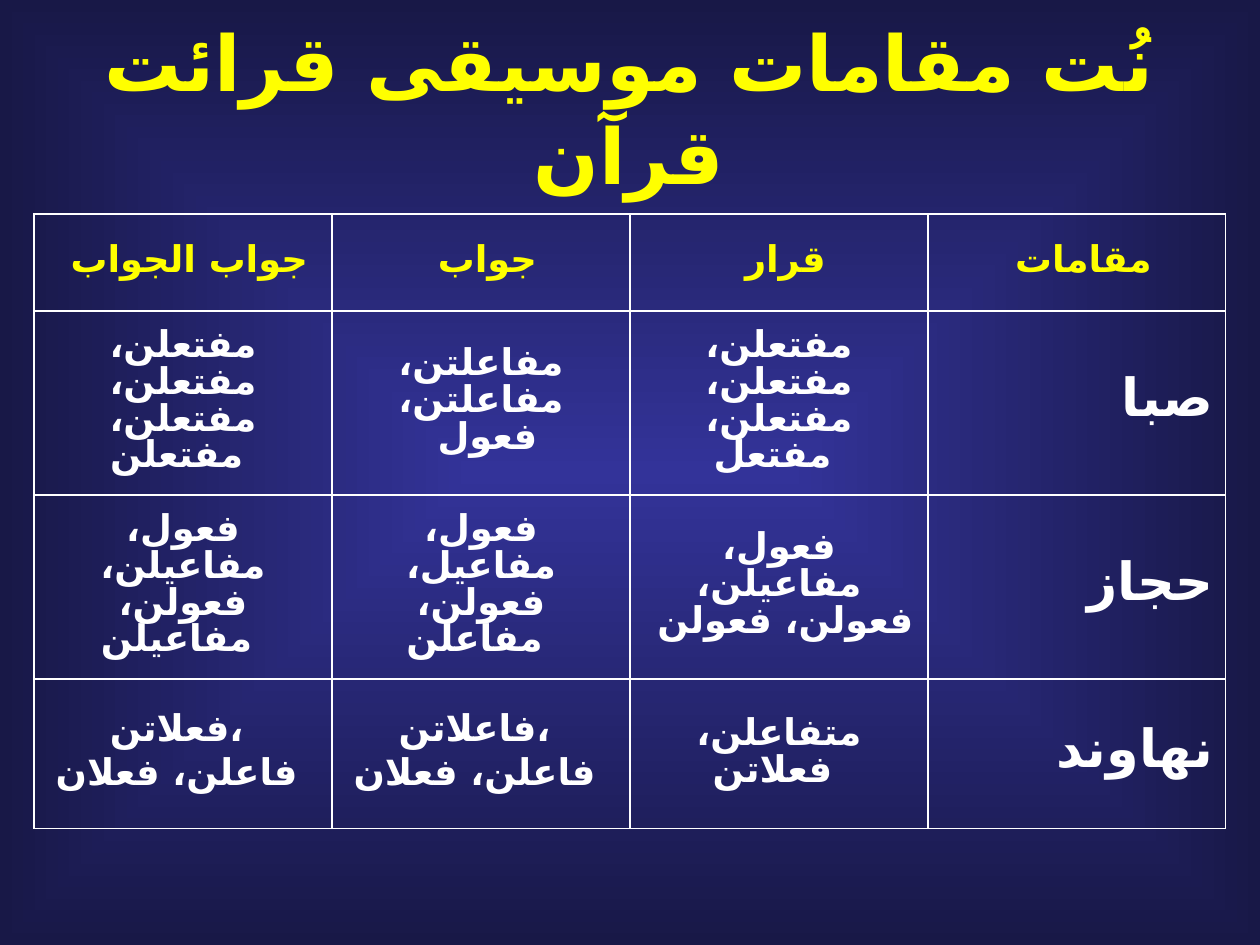
import pptx
import pptx.dml.color
import pptx.enum.text
import pptx.oxml
import pptx.oxml.ns
import pptx.util
from lxml import etree

TITLE = "نُت مقامات موسيقى قرائت قرآن"
HEADER = ["جواب الجواب ", "جواب ", "قرار ", "مقامات "]
BODY = [
    ["مفتعلن، مفتعلن، مفتعلن، مفتعلن ", "مفاعلتن، مفاعلتن، فعول ",
     "مفتعلن، مفتعلن، مفتعلن، مفتعل ", "صبا "],
    ["فعول، مفاعيلن، فعولن، مفاعيلن ", "فعول، مفاعيل، فعولن، مفاعلن ",
     "فعول، مفاعيلن، فعولن، فعولن ", "حجاز "],
    ["فعلاتن، \nفاعلن، فعلان ", "فاعلاتن، \nفاعلن، فعلان ",
     "متفاعلن، فعلاتن ", "نهاوند "],
]
RTL_BODY_CELLS = {(1, 1), (2, 2)}  # besides the header and the name column
NAME_COLUMN = 3
COLUMN_WIDTH = 298
ROW_HEIGHTS = [97, 184, 184, 150]
YELLOW, WHITE = "FFFF00", "FFFFFF"
LATIN_FONT, ARABIC_FONT = "Arial", "DejaVu Sans"
ALIGN = pptx.enum.text.PP_ALIGN
MIDDLE = pptx.enum.text.MSO_ANCHOR.MIDDLE


def px(length):
    return round(length * 914400 / 126)


def color(value):
    return pptx.dml.color.RGBColor.from_string(value)


def format_runs(paragraph, size, text_color):
    for run in paragraph.runs:
        run.font.name = LATIN_FONT
        run.font.size = pptx.util.Pt(size)
        run.font.bold = True
        run.font.color.rgb = color(text_color)
        script_font = etree.SubElement(run.font._element, pptx.oxml.ns.qn("a:cs"))
        script_font.set("typeface", ARABIC_FONT)


def add_borders(cell):
    properties = cell._tc.get_or_add_tcPr()
    for index, side in enumerate(("lnL", "lnR", "lnT", "lnB")):
        properties.insert(index, pptx.oxml.parse_xml(
            f'<a:{side} {pptx.oxml.ns.nsdecls("a")} w="9525"><a:solidFill>'
            f'<a:srgbClr val="{WHITE}"/></a:solidFill></a:{side}>'))


def fill_cell(cell, text, row, column):
    is_header = row == 0
    is_name = column == NAME_COLUMN and not is_header
    is_rtl = is_header or is_name or (row, column) in RTL_BODY_CELLS
    cell.fill.background()
    add_borders(cell)
    cell.vertical_anchor = MIDDLE
    cell.margin_left = cell.margin_right = pptx.util.Inches(0.1)
    cell.margin_top = cell.margin_bottom = pptx.util.Inches(0.04)
    cell.text_frame.text = text
    size = 30 if is_name else 21
    for paragraph in cell.text_frame.paragraphs:
        paragraph.alignment = ALIGN.RIGHT if is_name else ALIGN.CENTER
        paragraph.line_spacing = pptx.util.Pt(size)
        paragraph.space_before = pptx.util.Pt(size * 0.2)
        if is_rtl:
            paragraph._p.get_or_add_pPr().set("rtl", "1")
        format_runs(paragraph, size, YELLOW if is_header else WHITE)


presentation = pptx.Presentation()
presentation.slide_width, presentation.slide_height = px(1260), px(945)
slide = presentation.slides.add_slide(presentation.slide_layouts[5])

# Background: gradient from the centre outwards
background = slide.background.fill
background.gradient()
for stop, value in zip(background.gradient_stops, ("333399", "181847")):
    stop.color.rgb = color(value)
gradient = slide.background._cSld.find(".//" + pptx.oxml.ns.qn("a:gradFill"))
gradient.replace(gradient.find(pptx.oxml.ns.qn("a:lin")), pptx.oxml.parse_xml(
    f'<a:path {pptx.oxml.ns.nsdecls("a")} path="shape">'
    '<a:fillToRect l="50000" t="50000" r="50000" b="50000"/></a:path>'))

# Title
title = slide.shapes.title
title.left, title.top, title.width, title.height = px(62), px(28), px(1134), px(158)
title.text_frame.text = TITLE
title.text_frame.word_wrap = True
title.text_frame.auto_size = pptx.enum.text.MSO_AUTO_SIZE.NONE
title.text_frame.vertical_anchor = MIDDLE
heading = title.text_frame.paragraphs[0]
heading.alignment = ALIGN.CENTER
heading.line_spacing = pptx.util.Pt(53)
format_runs(heading, 44, YELLOW)

# Table of modes
rows = [HEADER] + BODY
table = slide.shapes.add_table(
    len(rows), len(HEADER), px(34), px(214),
    px(COLUMN_WIDTH * len(HEADER)), px(sum(ROW_HEIGHTS))).table
table.first_row = table.horz_banding = False
for table_column in table.columns:
    table_column.width = px(COLUMN_WIDTH)
for row, (texts, height) in enumerate(zip(rows, ROW_HEIGHTS)):
    table.rows[row].height = px(height)
    for column, text in enumerate(texts):
        fill_cell(table.cell(row, column), text, row, column)

presentation.save("out.pptx")
